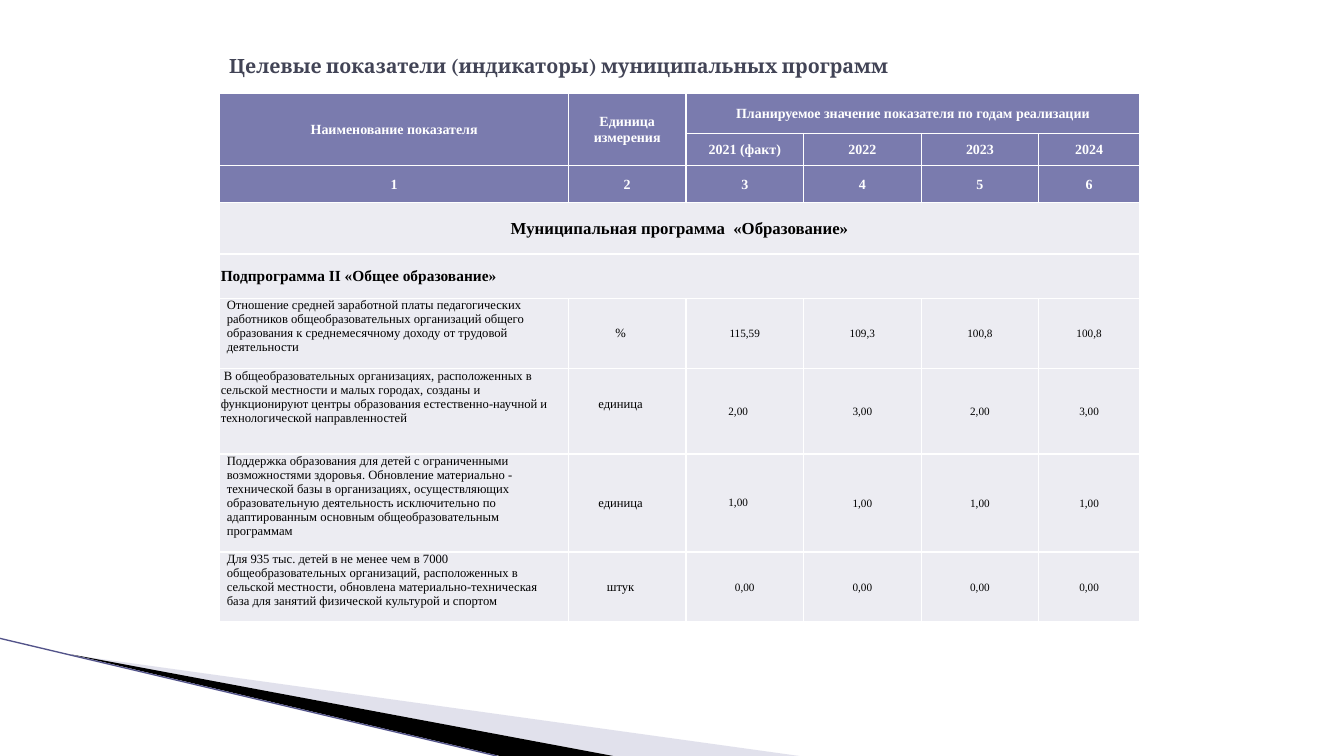
from lxml import etree
from pptx import Presentation
from pptx.dml import color
from pptx.enum import text
from pptx.oxml import ns
from pptx.util import Pt

SERIF = "Times New Roman"
HEAD, BODY = "7A7BAE", "ECECF2"
WHITE, BLACK = "FFFFFF", "000000"
COLS = [249, 84, 84, 84, 84, 72]
ROWS = [29, 23, 26, 37, 32, 50, 61, 70, 50]
YEARS = ["2021 (факт)", "2022", "2023", "2024"]
GOALS = [
    ("Отношение средней заработной платы педагогических работников "
     "общеобразовательных организаций общего образования к среднемесячному "
     "доходу от трудовой деятельности",
     "%", ["115,59", "109,3", "100,8", "100,8"]),
    (" В общеобразовательных организациях, расположенных в сельской местности "
     "и малых городах, созданы и функционируют центры образования "
     "естественно-научной и технологической направленностей",
     "единица", ["2,00", "3,00", "2,00", "3,00"]),
    ("Поддержка образования для детей с ограниченными возможностями здоровья. "
     "Обновление материально - технической базы в организациях, "
     "осуществляющих образовательную деятельность исключительно по "
     "адаптированным основным общеобразовательным программам",
     "единица", ["1,00"] * 4),
    ("Для 935 тыс. детей в не менее чем в 7000 общеобразовательных "
     "организаций, расположенных в сельской местности, обновлена "
     "материально-техническая база для занятий физической культурой и спортом",
     "штук", ["0,00"] * 4),
]


def rgb(code):
    return color.RGBColor.from_string(code)


def paint(fill, code):
    fill.solid()
    fill.fore_color.rgb = rgb(code)


def write(para, words, size=10, font=SERIF, ink=BLACK, bold=False, align="CENTER"):
    para.alignment = getattr(text.PP_ALIGN, align)
    run = para.add_run()
    run.text = words
    run.font.size, run.font.name, run.font.bold = Pt(size), font, bold
    run.font.color.rgb = rgb(ink)


def frame(cell):
    """Thin white lines on all four sides."""
    props = cell._tc.get_or_add_tcPr()
    for spot, side in enumerate(("lnL", "lnR", "lnT", "lnB")):
        line = etree.Element(ns.qn("a:" + side), w=str(Pt(1)))
        fill = etree.SubElement(line, ns.qn("a:solidFill"))
        etree.SubElement(fill, ns.qn("a:srgbClr"), val=WHITE)
        props.insert(spot, line)


def fill_cell(cell, words, pads=(0.7, 0.7, 0.7, 0), anchor="MIDDLE", **style):
    left, top, right, low = map(Pt, pads)
    cell.margin_left, cell.margin_top = left, top
    cell.margin_right, cell.margin_bottom = right, low
    cell.vertical_anchor = getattr(text.MSO_ANCHOR, anchor)
    write(cell.text_frame.paragraphs[0], words, **style)


def add_grid(slide):
    area = slide.shapes.add_table(len(ROWS), len(COLS), Pt(157), Pt(66.4),
                                  Pt(sum(COLS)), Pt(sum(ROWS)))
    grid = area.table
    for col, width in zip(grid.columns, COLS):
        col.width = Pt(width)
    for row, height in zip(grid.rows, ROWS):
        row.height = Pt(height)
    for r in range(len(ROWS)):
        for cell in grid.rows[r].cells:
            cell.margin_top = cell.margin_bottom = 0
            paint(cell.fill, HEAD if r < 3 else BODY)
            frame(cell)
    for first, last in [((0, 0), (1, 0)), ((0, 1), (1, 1)), ((0, 2), (0, 5)),
                        ((3, 0), (3, 5)), ((4, 0), (4, 5))]:
        grid.cell(*first).merge(grid.cell(*last))
    return grid


def fill_head(grid):
    heads = {(0, 0): "Наименование показателя", (0, 1): "Единица измерения",
             (0, 2): "Планируемое значение показателя по годам реализации"}
    heads.update({(1, c): year for c, year in enumerate(YEARS, 2)})
    heads.update({(2, c): str(c + 1) for c in range(len(COLS))})
    for place, words in heads.items():
        fill_cell(grid.cell(*place), words, ink=WHITE, bold=True)
    fill_cell(grid.cell(3, 0), "Муниципальная программа  «Образование»",
              size=12, bold=True)
    fill_cell(grid.cell(4, 0), "Подпрограмма II «Общее образование»",
              size=11, bold=True, align="LEFT")


def fill_goals(grid):
    for r, (goal, unit, values) in enumerate(GOALS, 5):
        wide = r == 6
        side = 0.7 if wide else 5
        fill_cell(grid.cell(r, 0), goal, (side, 0.7 if wide else 0, side, 0),
                  "TOP", size=9, align="LEFT")
        fill_cell(grid.cell(r, 1), unit, (5, 0, 14.4, 10 if wide else 0), size=9)
        for c, value in enumerate(values, 2):
            shift = c == 2 and r in (6, 7)
            pads = (5, 0, 14.4, 0) if shift else (0.7, 0.7, 0.7, 0)
            fill_cell(grid.cell(r, c), value, pads, size=8)


def add_wedge(slide, points, code, alpha=100):
    start, *rest = [(Pt(x), Pt(y)) for x, y in points]
    pen = slide.shapes.build_freeform(*start)
    pen.add_line_segments(rest, close=True)
    wedge = pen.convert_to_shape()
    wedge.shadow.inherit = False
    wedge.line.fill.background()
    paint(wedge.fill, code)
    if alpha < 100:
        tint = wedge.fill._xPr.find(".//" + ns.qn("a:srgbClr"))
        etree.SubElement(tint, ns.qn("a:alpha"), val=str(alpha * 1000))


def add_rule(slide, start, end, code, width):
    rule = slide.shapes.add_connector(1, *map(Pt, start + end))
    rule.line.color.rgb = rgb(code)
    rule.line.width = Pt(width)
    etree.SubElement(rule._element.spPr, ns.qn("a:effectLst"))


def add_title(slide, words):
    title = slide.shapes.title
    title.left, title.top, title.width, title.height = map(Pt, (156.5, 21.6, 648, 50))
    title.text_frame.vertical_anchor = text.MSO_ANCHOR.MIDDLE
    write(title.text_frame.paragraphs[0], words, size=14, font="Cambria",
          ink="424456", bold=True, align="LEFT")


def main():
    deck = Presentation()
    deck.slide_width, deck.slide_height = Pt(960), Pt(540)
    slide = deck.slides.add_slide(deck.slide_layouts[5])

    # Corner wedges
    add_wedge(slide, [(52.5, 468), (571, 540), (438, 540)], "B6B6D1", alpha=40)
    add_wedge(slide, [(51, 467.5), (438, 540), (357, 540)], BLACK)
    add_rule(slide, (0, 456), (355, 540), "53548A", 0.95)

    # Title and table
    add_title(slide, "Целевые показатели (индикаторы) муниципальных программ")
    grid = add_grid(slide)
    fill_head(grid)
    fill_goals(grid)
    deck.save("out.pptx")


if __name__ == "__main__":
    main()
